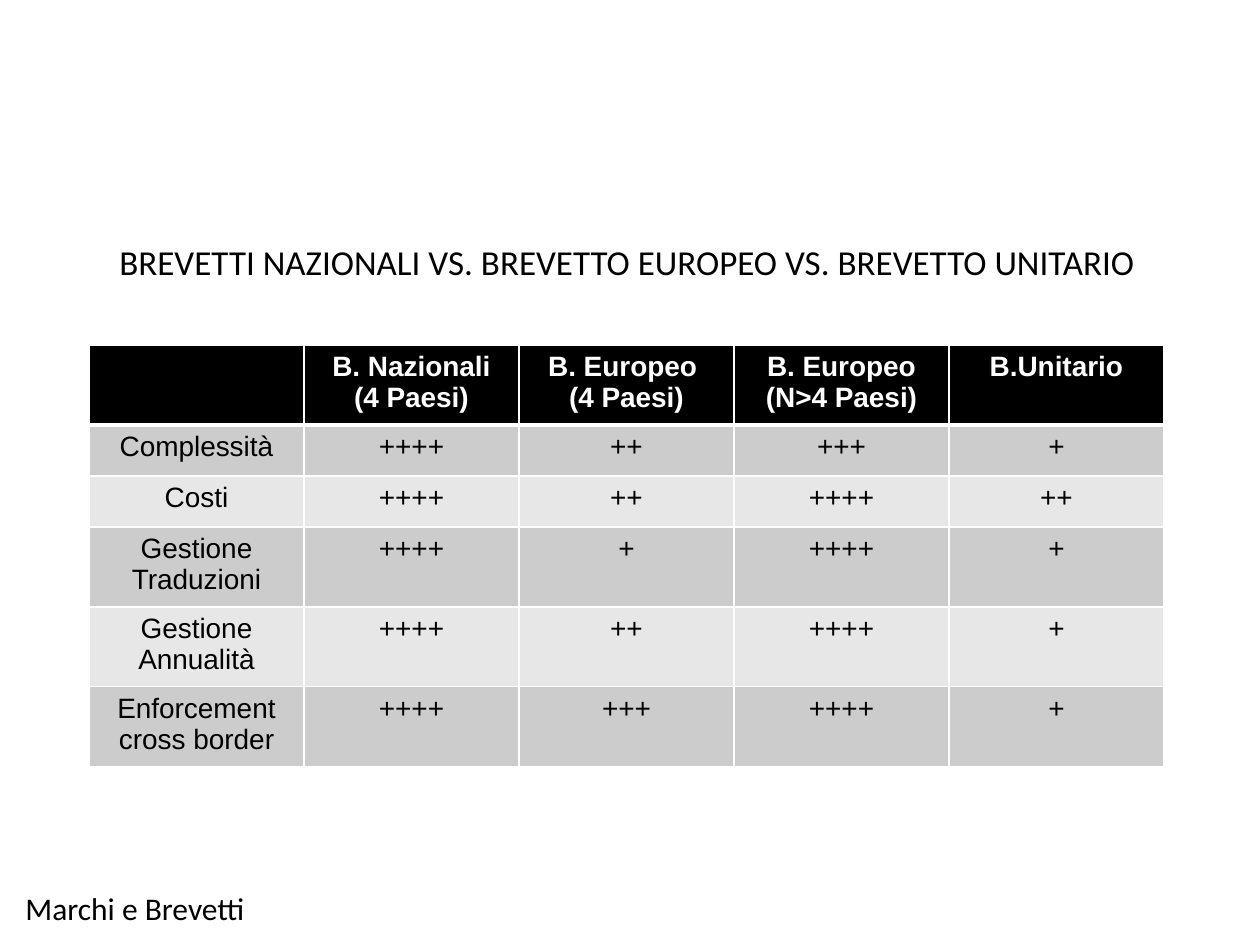
from lxml.etree import SubElement
from pptx import Presentation
from pptx.dml.color import RGBColor as RGB
from pptx.enum.shapes import MSO_SHAPE
from pptx.enum.text import MSO_AUTO_SIZE as AUTO, PP_ALIGN as AL
from pptx.oxml.ns import qn
from pptx.util import Pt

PX = 914400 // 126
C = {"black": "000000", "white": "FFFFFF", "dark": "CCCCCC", "light": "E7E7E7"}


def add_run(p, text, font, size, color, bold=False):
    r = p.add_run()
    r.text = text
    r.font.name, r.font.size, r.font.bold = font, Pt(size), bold
    r.font.color.rgb = RGB.from_string(C[color])


def add_border(cell, side, width):
    ln = SubElement(cell._tc.get_or_add_tcPr(), qn("a:" + side), w=str(Pt(width)))
    fill = SubElement(ln, qn("a:solidFill"))
    SubElement(fill, qn("a:srgbClr"), val=C["white"])


prs = Presentation()
prs.slide_width, prs.slide_height = 1260 * PX, 945 * PX
s = prs.slides.add_slide(prs.slide_layouts[6])

# Footer and title
for text, size, box in [
    ("Marchi e Brevetti", 18, (13, 883, 248, 50)),
    ("BREVETTI NAZIONALI VS. BREVETTO EUROPEO VS. BREVETTO UNITARIO", 20,
     (107, 234, 1050, 55)),
]:
    x, y, w, h = [v * PX for v in box]
    if size == 18:
        sp = s.shapes.add_shape(MSO_SHAPE.RECTANGLE, x, y, w, h)
        sp.shadow.inherit = False
        sp.fill.solid()
        sp.fill.fore_color.rgb = RGB.from_string(C["white"])
        sp.line.fill.background()
    else:
        sp = s.shapes.add_textbox(x, y, w, h)
    tf = sp.text_frame
    tf.word_wrap = False
    tf.auto_size = AUTO.SHAPE_TO_FIT_TEXT
    tf.paragraphs[0].alignment = AL.LEFT
    add_run(tf.paragraphs[0], text, "Calibri", size, "black")

# Comparison table: each cell is a list of paragraphs
header = [[], ["B. Nazionali", "(4 Paesi)"], ["B. Europeo ", "(4 Paesi)"],
          ["B. Europeo", "(N>4 Paesi)"], ["B.Unitario"]]
ratings = [
    ("Complessità", 4, 2, 3, 1),
    ("Costi", 4, 2, 4, 2),
    ("Gestione Traduzioni", 4, 1, 4, 1),
    ("Gestione Annualità", 4, 2, 4, 1),
    ("Enforcement cross border", 4, 3, 4, 1),
]
rows = [header] + [[[name]] + [["+" * n] for n in marks] for name, *marks in ratings]
heights = [79, 51, 51, 80, 80, 80]

table = s.shapes.add_table(len(rows), len(header), 89 * PX, 345 * PX,
                           1075 * PX, sum(heights) * PX).table
table.first_row = table.horz_banding = False
for col in table.columns:
    col.width = 215 * PX

for i, (row, height) in enumerate(zip(rows, heights)):
    table.rows[i].height = height * PX
    is_head = i == 0
    fill = "black" if is_head else "dark" if i % 2 else "light"
    for j, lines in enumerate(row):
        cell = table.cell(i, j)
        for side in ("lnL", "lnR", "lnT", "lnB"):
            thick = (is_head and side == "lnB") or (i == 1 and side == "lnT")
            add_border(cell, side, 3 if thick else 1)
        cell.fill.solid()
        cell.fill.fore_color.rgb = RGB.from_string(C[fill])
        tf = cell.text_frame
        for k, line in enumerate(lines):
            p = tf.add_paragraph() if k else tf.paragraphs[0]
            p.alignment = AL.CENTER
            add_run(p, line, "Arial", 16, "white" if is_head else "black", is_head)

prs.save("out.pptx")
